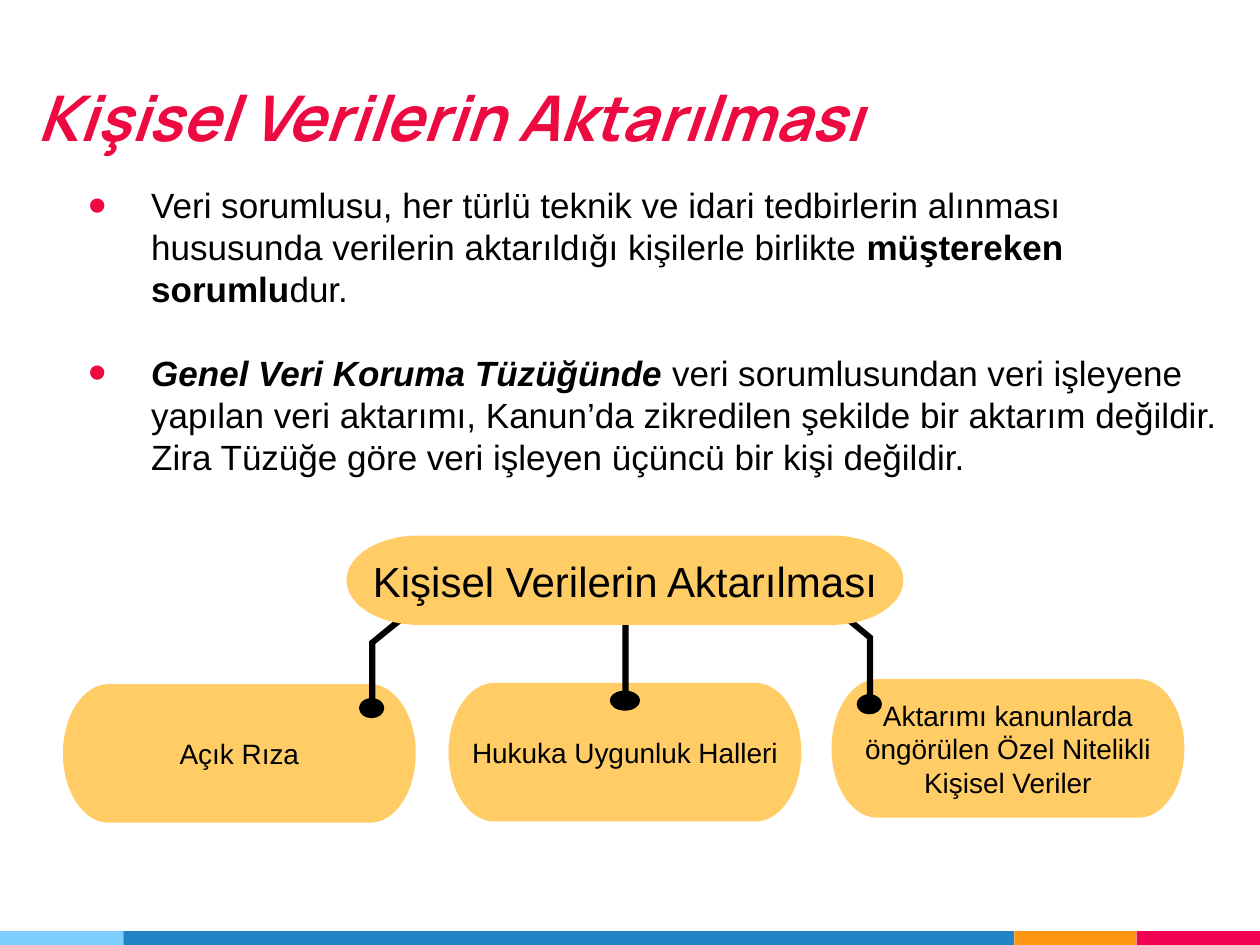
from dataclasses import dataclass
from itertools import pairwise
from math import cos, radians, sin, tan

from lxml import etree
from pptx import Presentation
from pptx.dml.color import RGBColor
from pptx.enum.shapes import MSO_SHAPE
from pptx.enum.text import MSO_ANCHOR, MSO_AUTO_SIZE, PP_ALIGN
from pptx.oxml.ns import qn
from pptx.util import Inches, Pt

RECT = MSO_SHAPE.RECTANGLE
TOP, MIDDLE, BOTTOM = MSO_ANCHOR.TOP, MSO_ANCHOR.MIDDLE, MSO_ANCHOR.BOTTOM
LEFT, CENTER = PP_ALIGN.LEFT, PP_ALIGN.CENTER
NO_FIT = MSO_AUTO_SIZE.NONE


@dataclass(frozen=True)
class Theme:
    title_font: str = "Manrope"
    body_font: str = "Arial"
    accent: str = "EC0A40"
    ink: str = "000000"
    node: str = "FFCC66"
    title_size: int = 36
    body_size: int = 20
    root_size: int = 24
    leaf_size: int = 16


THEME = Theme()

TITLE = "Kişisel Verilerin Aktarılması"
TITLE_BOX = (0.2, 0.44, 9.61, 0.88)
BODY_BOX = (0.35, 1.36, 9.42, 3.5)
# Runs are (text, bold, italic)
BULLETS = [
    [("Veri sorumlusu, her türlü teknik ve idari tedbirlerin alınması hususunda "
      "verilerin aktarıldığı kişilerle birlikte ", False, False),
     ("müştereken sorumlu", True, False),
     ("dur.", False, False)],
    [("Genel Veri Koruma Tüzüğünde ", True, True),
     ("veri sorumlusundan veri işleyene yapılan veri aktarımı, Kanun’da zikredilen "
      "şekilde bir aktarım değildir. Zira Tüzüğe göre veri işleyen üçüncü bir kişi "
      "değildir.", False, False)],
]

# Footer bar: (width, colour), left to right
FOOTER_TOP, FOOTER_HEIGHT = 7.39, 0.11
FOOTER = [(0.98, "7ECEFD"), (7.07, "2185C5"), (0.97, "FF9715"), (0.98, "F20253")]

ROOT = (TITLE, (2.75, 4.25, 4.42, 0.71))
LEAF_SIZE = (2.8, 1.1)
LEAVES = [
    ("Açık Rıza", (0.5, 5.43)),
    ("Hukuka Uygunluk Halleri", (3.56, 5.42)),
    ("Aktarımı kanunlarda öngörülen Özel Nitelikli Kişisel Veriler", (6.6, 5.39)),
]
# Pins: left stem edge, right stem edge (both from the top), dot centre, dot radii
PINS = [
    ([(3.71, 4.45), (2.93, 5.09)], [(3.71, 4.52), (2.98, 5.11)], (2.95, 5.62), (0.1, 0.08)),
    ([(4.94, 4.42)], [(4.99, 4.42)], (4.96, 5.56), (0.12, 0.08)),
    ([(6.16, 4.48), (6.88, 5.07)], [(6.16, 4.41), (6.93, 5.05)], (6.9, 5.59), (0.1, 0.08)),
]


def arc(cx, cy, rx, ry, *stops):
    """Line to the first stop, then one Bezier curve to each next stop.

    Stops are degrees, clockwise from the right.
    """
    def at(a, pull=0):
        return (cx + rx * (cos(a) - pull * sin(a)), cy + ry * (sin(a) + pull * cos(a)))

    angles = [radians(d) for d in stops]
    segments = [(at(angles[0]),)]
    for a, b in pairwise(angles):
        k = 4 / 3 * tan((b - a) / 4)
        segments.append((at(a, k), at(b, -k), at(b)))
    return segments


def paint(sp, color):
    sp.shadow.inherit = False
    sp.fill.solid()
    sp.fill.fore_color.rgb = RGBColor.from_string(color)
    sp.line.fill.background()


def add_outline(s, segments, color):
    """Closed outline; a segment has one point for a line, three for a curve."""
    emu = [(Inches(x), Inches(y)) for segment in segments for x, y in segment]
    builder = s.shapes.build_freeform(*emu[0])
    builder.add_line_segments(emu[1:], close=True)
    sp = builder.convert_to_shape()
    lines = sp._element.iter(qn("a:lnTo"))
    steps = iter(list(lines))
    for segment in segments[1:]:
        first, *others = [next(steps) for _ in segment]
        if others:
            first.tag = qn("a:cubicBezTo")
            for other in others:
                first.append(other[0])
                other.getparent().remove(other)
    paint(sp, color)
    return sp


def set_frame(tf, anchor, inset):
    tf.word_wrap = True
    tf.auto_size = NO_FIT
    tf.vertical_anchor = anchor
    tf.margin_left = tf.margin_right = tf.margin_top = tf.margin_bottom = Inches(inset)


def add_run(p, text, font, size, color, bold=False, italic=False):
    r = p.add_run()
    r.text = text
    r.font.name = font
    r.font.size = Pt(size)
    r.font.bold = bold
    r.font.italic = italic
    r.font.color.rgb = RGBColor.from_string(color)


def place(sp, box):
    sp.left, sp.top, sp.width, sp.height = map(Inches, box)


def set_bullet(p):
    pPr = p._p.get_or_add_pPr()
    pPr.set("marL", str(Inches(0.75)))
    pPr.set("indent", str(Inches(-0.5)))
    color = etree.SubElement(pPr, qn("a:buClr"))
    etree.SubElement(color, qn("a:srgbClr")).set("val", THEME.accent)
    etree.SubElement(pPr, qn("a:buSzPct")).set("val", "150000")
    etree.SubElement(pPr, qn("a:buFont")).set("typeface", THEME.body_font)
    etree.SubElement(pPr, qn("a:buChar")).set("char", "•")


def add_node(s, text, box, size):
    """Pill whose ends are half ellipses, 13% of the width each."""
    x, y, w, h = box
    rx, ry = 0.13 * w, h / 2
    segments = (arc(x + w - rx, y + ry, rx, ry, -90, 0, 90)
                + arc(x + rx, y + ry, rx, ry, 90, 180, 270))
    tf = add_outline(s, segments, THEME.node).text_frame
    set_frame(tf, MIDDLE, 0.03)
    p = tf.paragraphs[0]
    p.alignment = CENTER
    add_run(p, text, THEME.body_font, size, THEME.ink)


def add_pin(s, left_edge, right_edge, center, radii):
    dot = arc(*center, *radii, -75, 0, 90, 180, 255)
    foot = dot[0][0][1]
    # Stem sides stay vertical down to the dot
    right = right_edge + [(right_edge[-1][0], foot)]
    left = [(left_edge[-1][0], foot)] + left_edge[::-1]
    segments = [(pt,) for pt in right] + dot + [(pt,) for pt in left]
    add_outline(s, segments, THEME.ink)


def add_title(s):
    sp = s.shapes.title
    place(sp, TITLE_BOX)
    set_frame(sp.text_frame, BOTTOM, 0.1)
    p = sp.text_frame.paragraphs[0]
    p.alignment = LEFT
    add_run(p, TITLE, THEME.title_font, THEME.title_size, THEME.accent, True, True)


def add_body(s):
    sp = s.placeholders[1]
    place(sp, BODY_BOX)
    tf = sp.text_frame
    set_frame(tf, TOP, 0.1)
    for i, runs in enumerate(BULLETS):
        p = tf.add_paragraph() if i else tf.paragraphs[0]
        p.space_before = Pt(23.5 if i else 0)
        set_bullet(p)
        for text, bold, italic in runs:
            add_run(p, text, THEME.body_font, THEME.body_size, THEME.ink, bold, italic)


def add_footer(s):
    x = 0
    for width, color in FOOTER:
        box = (x, FOOTER_TOP, width, FOOTER_HEIGHT)
        paint(s.shapes.add_shape(RECT, *map(Inches, box)), color)
        x += width


def main():
    prs = Presentation()
    prs.slide_width, prs.slide_height = Inches(10), Inches(7.5)
    s = prs.slides.add_slide(prs.slide_layouts[1])
    add_footer(s)
    add_title(s)
    add_body(s)
    for text, corner in LEAVES:
        add_node(s, text, corner + LEAF_SIZE, THEME.leaf_size)
    for pin in PINS:
        add_pin(s, *pin)
    add_node(s, *ROOT, THEME.root_size)
    prs.save("out.pptx")


if __name__ == "__main__":
    main()
